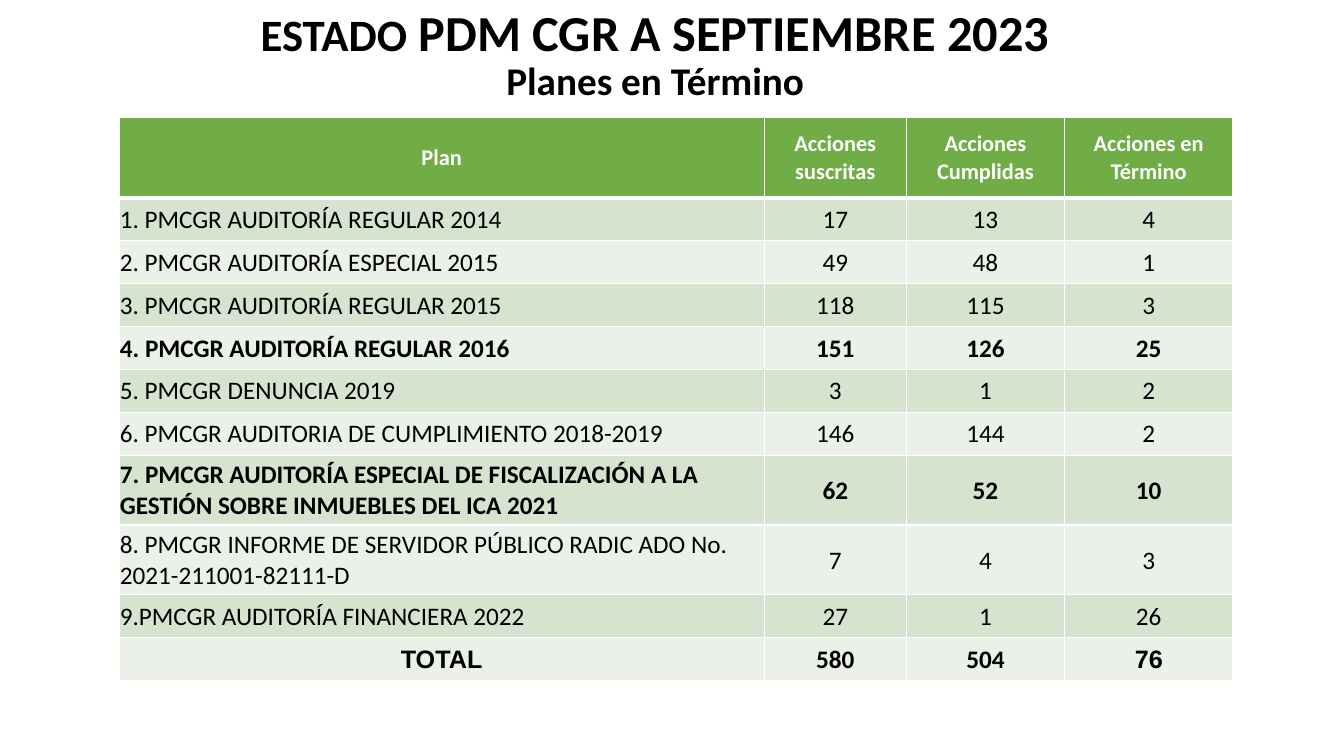
from lxml.etree import SubElement
from pptx import Presentation
from pptx.dml.color import RGBColor
from pptx.enum.text import MSO_ANCHOR, MSO_AUTO_SIZE, PP_ALIGN
from pptx.oxml.ns import qn
from pptx.util import Cm, Pt

BLACK = RGBColor(0x00, 0x00, 0x00)
WHITE = RGBColor(0xFF, 0xFF, 0xFF)
GREEN = RGBColor(0x70, 0xAD, 0x47)
BANDS = [RGBColor(0xD5, 0xE3, 0xCF), RGBColor(0xEB, 0xF1, 0xE9)]

TITLE_LINES = [
    [("ESTADO", 32), (" PDM CGR A SEPTIEMBRE 2023", 36)],
    [("Planes en Término", 28)],
]
HEADER = ("Plan", "Acciones suscritas", "Acciones Cumplidas", "Acciones en Término")
PLANS = [
    ("1. PMCGR AUDITORÍA REGULAR 2014", 17, 13, 4),
    ("2. PMCGR AUDITORÍA ESPECIAL 2015", 49, 48, 1),
    ("3. PMCGR AUDITORÍA REGULAR 2015", 118, 115, 3),
    ("4. PMCGR AUDITORÍA REGULAR 2016", 151, 126, 25),
    ("5. PMCGR DENUNCIA 2019", 3, 1, 2),
    ("6. PMCGR AUDITORIA DE CUMPLIMIENTO 2018-2019", 146, 144, 2),
    ("7. PMCGR AUDITORÍA ESPECIAL DE FISCALIZACIÓN A LA "
     "GESTIÓN SOBRE INMUEBLES DEL ICA 2021", 62, 52, 10),
    ("8. PMCGR INFORME DE SERVIDOR PÚBLICO RADIC ADO No. "
     "2021-211001-82111-D", 7, 4, 3),
    ("9.PMCGR AUDITORÍA FINANCIERA 2022", 27, 1, 26),
]
TOTAL = ("TOTAL", 580, 504, 76)
ROWS = [HEADER, *PLANS, TOTAL]
TOTAL_ROW = len(ROWS) - 1
BOLD_ROWS = {0, 4, 7, TOTAL_ROW}
TWO_LINE_ROWS = {7, 8}
ARIAL_CELLS = {(TOTAL_ROW, 0), (TOTAL_ROW, 3)}

COLUMN_WIDTHS = [16.26, 3.58, 3.99, 4.24]
HEADER_HEIGHT, ROW_HEIGHT, TWO_LINE_HEIGHT = 2.02, 1.08, 1.76


def apply(target, values):
    for name, value in values.items():
        setattr(target, name, value)


def format_font(font, size, color, bold=True, name="Calibri"):
    apply(font, {"size": Pt(size), "bold": bold, "name": name})
    font.color.rgb = color


def row_height(row):
    if row == 0:
        return HEADER_HEIGHT
    return TWO_LINE_HEIGHT if row in TWO_LINE_ROWS else ROW_HEIGHT


def add_borders(cell, row):
    """Draw white cell edges, thicker between the header and the first plan."""
    properties = cell._tc.get_or_add_tcPr()
    thick_edge = {0: "lnB", 1: "lnT"}.get(row)
    for position, edge in enumerate(("lnL", "lnR", "lnT", "lnB")):
        width = Pt(3 if edge == thick_edge else 1)
        line = SubElement(properties, qn(f"a:{edge}"), w=str(width))
        fill = SubElement(line, qn("a:solidFill"))
        SubElement(fill, qn("a:srgbClr"), val=str(WHITE))
        properties.insert(position, line)


def fill_cell(cell, row, column, value):
    is_header = row == 0
    margin = Cm(0 if is_header else 0.02)
    apply(cell, {"text": str(value), "vertical_anchor": MSO_ANCHOR.MIDDLE,
                 "margin_left": margin, "margin_right": margin,
                 "margin_top": margin, "margin_bottom": 0})
    cell.fill.solid()
    cell.fill.fore_color.rgb = GREEN if is_header else BANDS[(row - 1) % 2]
    add_borders(cell, row)
    para = cell.text_frame.paragraphs[0]
    is_plan_name = column == 0 and 0 < row < TOTAL_ROW
    para.alignment = PP_ALIGN.LEFT if is_plan_name else PP_ALIGN.CENTER
    format_font(para.runs[0].font, 16 if is_header else 18,
                WHITE if is_header else BLACK, row in BOLD_ROWS,
                "Arial" if (row, column) in ARIAL_CELLS else "Calibri")


def add_title(page):
    title = page.shapes.title
    apply(title, {"left": Cm(-0.56), "top": Cm(0.33),
                  "width": Cm(34.14), "height": Cm(2.16)})
    apply(title.text_frame, {"word_wrap": True, "auto_size": MSO_AUTO_SIZE.NONE,
                             "vertical_anchor": MSO_ANCHOR.MIDDLE})
    para = title.text_frame.paragraphs[0]
    apply(para, {"alignment": PP_ALIGN.CENTER, "line_spacing": 0.9})
    for index, line in enumerate(TITLE_LINES):
        if index:
            para.add_line_break()
        for text, size in line:
            span = para.add_run()
            span.text = text
            format_font(span.font, size, BLACK)


def add_plan_table(page):
    heights = [row_height(row) for row in range(len(ROWS))]
    table = page.shapes.add_table(
        len(ROWS), len(HEADER), Cm(3), Cm(2.97),
        Cm(sum(COLUMN_WIDTHS)), Cm(sum(heights))).table
    for column, width in zip(table.columns, COLUMN_WIDTHS):
        column.width = Cm(width)
    for row, values in enumerate(ROWS):
        table.rows[row].height = Cm(heights[row])
        for column, value in enumerate(values):
            fill_cell(table.cell(row, column), row, column, value)


def main():
    deck = Presentation()
    apply(deck, {"slide_width": Cm(33.87), "slide_height": Cm(19.05)})
    page = deck.slides.add_slide(deck.slide_layouts[5])
    add_title(page)
    add_plan_table(page)
    deck.save("out.pptx")


if __name__ == "__main__":
    main()
